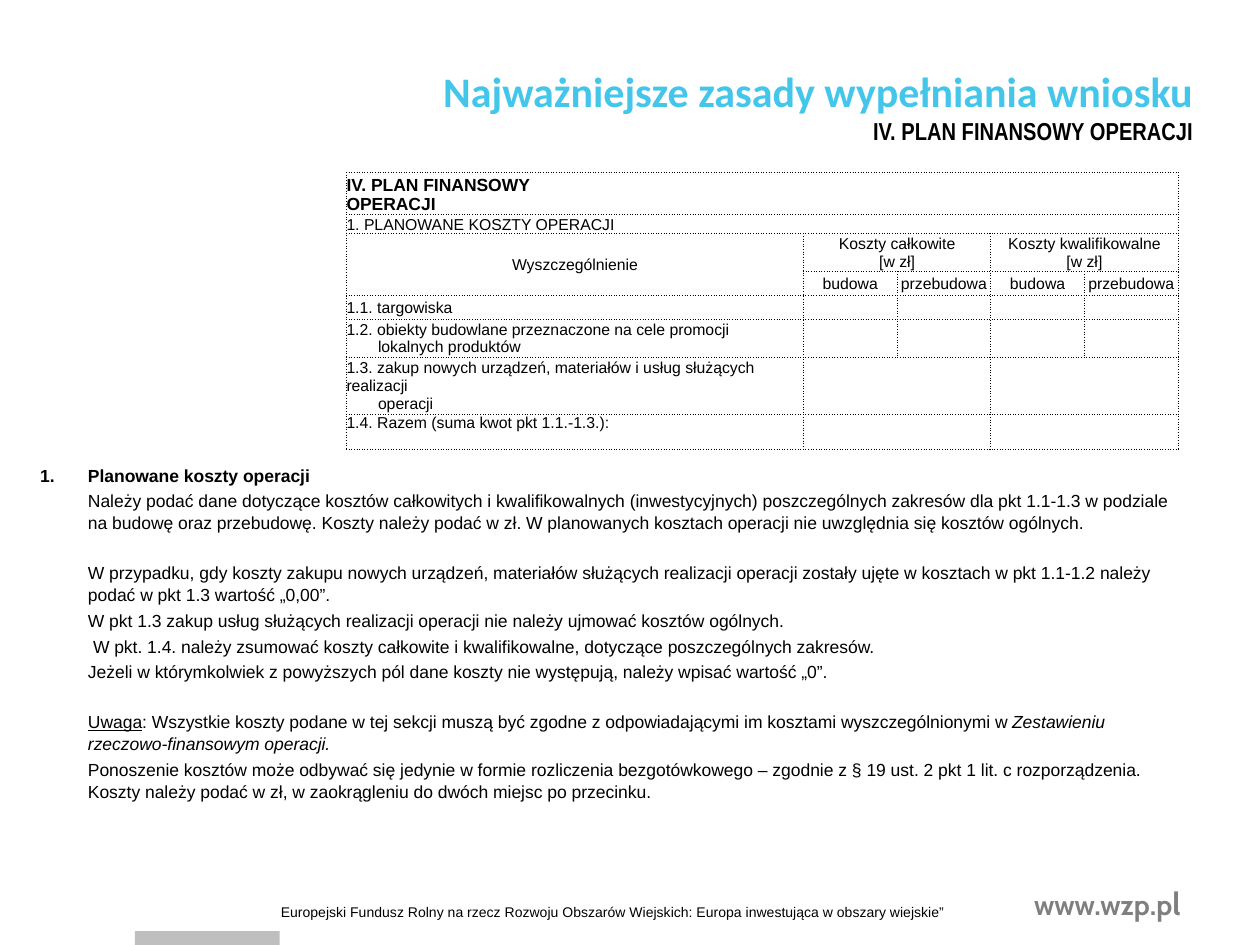
import pptx
import pptx.util
import pptx.dml.color
import pptx.enum.shapes
import pptx.enum.text
import pptx.oxml.ns
from lxml import etree

Inches = pptx.util.Inches
Pt = pptx.util.Pt
ALIGN = pptx.enum.text.PP_ALIGN
ANCHOR = pptx.enum.text.MSO_ANCHOR
LEFT, MID, RIGHT = ALIGN.LEFT, ALIGN.CENTER, ALIGN.RIGHT


def color(code):
    return pptx.dml.color.RGBColor.from_string(code)


def node(parent, tag, **attrs):
    return etree.SubElement(parent, pptx.oxml.ns.qn(tag), **attrs)


def write(par, text, size=10, font="Arial", ink="000000",
          bold=False, italic=False, under=False):
    run = par.add_run()
    run.text = text
    run.font.size = Pt(size)
    run.font.name = font
    run.font.bold = bold
    run.font.italic = italic
    run.font.underline = under
    run.font.color.rgb = color(ink)


def border(cell, sides):
    props = cell._tc.get_or_add_tcPr()
    for side in "LRTB":
        line = node(props, f"a:ln{side}", w="6350")
        if side in sides:
            fill = node(line, "a:solidFill")
            node(fill, "a:srgbClr", val="000000")
            node(line, "a:prstDash", val="dot")
        else:
            node(line, "a:noFill")


class Page:
    def __init__(self, deck):
        self.slide = deck.slides.add_slide(deck.slide_layouts[5])
        self.shapes = self.slide.shapes

    def title(self, box, lines):
        shape = self.shapes.title
        shape.left, shape.top, shape.width, shape.height = map(Inches, box)
        frame = shape.text_frame
        frame.auto_size = pptx.enum.text.MSO_AUTO_SIZE.NONE
        frame.vertical_anchor = ANCHOR.TOP
        self.fill(frame, [dict(runs=[line], align=RIGHT) for line in lines])

    def bar(self, box, fill):
        shape = self.shapes.add_shape(
            pptx.enum.shapes.MSO_SHAPE.RECTANGLE, *map(Inches, box))
        shape.shadow.inherit = False
        shape.fill.solid()
        shape.fill.fore_color.rgb = color(fill)
        shape.line.fill.background()

    def text(self, box, pars):
        frame = self.shapes.add_textbox(*map(Inches, box)).text_frame
        frame.word_wrap = True
        self.fill(frame, pars)

    def fill(self, frame, pars):
        for i, item in enumerate(pars):
            par = frame.add_paragraph() if i else frame.paragraphs[0]
            par.alignment = item.get("align", LEFT)
            par.space_before = Pt(item.get("gap", 0) if i else 0)
            par.line_spacing = item.get("lead", 1.0)
            props = par._p.get_or_add_pPr()
            props.set("marL", str(Inches(item.get("left", 0))))
            props.set("indent", str(Inches(item.get("first", 0))))
            if item.get("number"):
                node(props, "a:buFont", typeface="+mj-lt")
                node(props, "a:buAutoNum", type="arabicPeriod")
            for text, style in item["runs"]:
                write(par, text, **style)

    def table(self, box, widths, heights, cells):
        grid = self.shapes.add_table(
            len(heights), len(widths), *map(Inches, box)).table
        grid.first_row = grid.horz_banding = False
        for col, width in zip(grid.columns, widths):
            col.width = Inches(width)
        for row, height in zip(grid.rows, heights):
            row.height = Inches(height)
        # Plain dotted grid; the heading row has no inner lines
        last = len(widths) - 1
        for r in range(len(heights)):
            for c in range(len(widths)):
                cell = grid.cell(r, c)
                ends = ("L" if c == 0 else "") + ("R" if c == last else "")
                border(cell, "TB" + ends if r == 0 else "LRTB")
                cell.fill.solid()
                cell.fill.fore_color.rgb = color("FFFFFF")
                cell.margin_left = cell.margin_right = 0
                cell.margin_top = cell.margin_bottom = 0
                if (r, c) not in cells:
                    node(cell.text_frame.paragraphs[0]._p,
                         "a:endParaRPr", sz="900")
        for (r, c), (rows, cols, text, look) in cells.items():
            cell = grid.cell(r, c)
            if rows * cols > 1:
                cell.merge(grid.cell(r + rows - 1, c + cols - 1))
            if not text:
                node(cell.text_frame.paragraphs[0]._p,
                     "a:endParaRPr", sz="900")
                continue
            cell.vertical_anchor = look.get("anchor", ANCHOR.MIDDLE)
            style = dict(size=look.get("size", 9), bold=look.get("bold", False))
            self.fill(cell.text_frame, [
                dict(runs=[(line, style)], align=look.get("align", LEFT),
                     left=look.get("hang", 0) if i else 0)
                for i, line in enumerate(text.split("\n"))])


def costs():
    """Cells of the cost table: place -> row span, column span, text, look."""
    mid = dict(align=MID)
    cells = {
        (0, 0): (1, 1, "IV. PLAN FINANSOWY OPERACJI",
                 dict(size=10, bold=True, anchor=ANCHOR.BOTTOM)),
        (1, 0): (1, 25, "1. PLANOWANE KOSZTY OPERACJI",
                 dict(anchor=ANCHOR.BOTTOM)),
        (2, 0): (2, 9, "Wyszczególnienie", mid),
    }
    for c, kind in ((9, "całkowite"), (17, "kwalifikowalne")):
        cells[2, c] = (1, 8, f"Koszty {kind}\n[w zł]", mid)
        cells[3, c] = (1, 4, "budowa", mid)
        cells[3, c + 4] = (1, 4, "przebudowa", mid)
    items = [
        ("1.1. targowiska", 4, {}),
        ("1.2. obiekty budowlane przeznaczone na cele promocji\n"
         "lokalnych produktów", 4, {}),
        ("1.3. zakup nowych urządzeń, materiałów i usług służących realizacji\n"
         "operacji", 8, {}),
        ("1.4. Razem (suma kwot pkt 1.1.-1.3.):", 8, dict(anchor=ANCHOR.TOP)),
    ]
    for r, (text, span, look) in enumerate(items, 4):
        cells[r, 0] = (1, 9, text, dict(hang=0.25, **look))
        for c in range(9, 25, span):
            cells[r, c] = (1, span, "", {})
    return cells


def note(*runs, gap=2, **look):
    runs = [(run, {}) if isinstance(run, str) else run for run in runs]
    return dict(runs=runs, gap=gap, left=0.38, lead=1.05, **look)


def main():
    deck = pptx.Presentation()
    deck.slide_width, deck.slide_height = Inches(10), Inches(7.5)
    page = Page(deck)

    # Footer
    page.bar((1.07, 7.39, 1.15, 0.11), "BFBFBF")
    web = dict(font="Cabin", ink="7F7F7F", bold=True)
    page.text((8.11, 6.97, 1.6, 0.4), [dict(runs=[
        ("www.wzp.p", dict(size=16, **web)), ("l", dict(size=18, **web))])])
    page.text((2.13, 7.12, 7.08, 0.24), [dict(runs=[(
        "Europejski Fundusz Rolny na rzecz Rozwoju Obszarów Wiejskich: "
        "Europa inwestująca w obszary wiejskie”", dict(size=8))])])

    # Title
    page.title((3.15, 0.47, 6.42, 0.74), [
        ("Najważniejsze zasady wypełniania wniosku",
         dict(size=24, font="Calibri", ink="44C6EB", bold=True)),
        ("IV. PLAN FINANSOWY OPERACJI",
         dict(size=14, font="Arial Narrow", bold=True))])

    # Notes
    page.text((0.22, 3.63, 9.2, 2.75), [
        note(("Planowane koszty operacji", dict(bold=True)),
             first=-0.38, number=True),
        note("Należy podać dane dotyczące kosztów całkowitych i kwalifikowalnych "
             "(inwestycyjnych) poszczególnych zakresów dla pkt 1.1-1.3 w podziale "
             "na budowę oraz przebudowę. Koszty należy podać w zł. W planowanych "
             "kosztach operacji nie uwzględnia się kosztów ogólnych."),
        note("W przypadku, gdy koszty zakupu nowych urządzeń, materiałów służących "
             "realizacji operacji zostały ujęte w kosztach w pkt 1.1-1.2 należy "
             "podać w pkt 1.3 wartość „0,00”.", gap=16),
        note("W pkt 1.3 zakup usług służących realizacji operacji nie należy "
             "ujmować kosztów ogólnych."),
        note("W pkt. 1.4. należy zsumować koszty całkowite i kwalifikowalne, "
             "dotyczące poszczególnych zakresów.", first=0.04),
        note("Jeżeli w którymkolwiek z powyższych pól dane koszty nie występują, "
             "należy wpisać wartość „0”."),
        note(("Uwaga", dict(under=True)),
             ": Wszystkie koszty podane w tej sekcji muszą być zgodne z "
             "odpowiadającymi im kosztami wyszczególnionymi w ",
             ("Zestawieniu rzeczowo-finansowym operacji.", dict(italic=True)),
             gap=16),
        note("Ponoszenie kosztów może odbywać się jedynie w formie rozliczenia "
             "bezgotówkowego – zgodnie z § 19 ust. 2 pkt 1 lit. c rozporządzenia. "
             "Koszty należy podać w zł, w zaokrągleniu do dwóch miejsc po "
             "przecinku."),
    ])

    # Cost table
    page.table((2.75, 1.37, 6.6, 2.1), [2.14] + [4.46 / 24] * 24,
               [0.31, 0.14, 0.28, 0.19, 0.19, 0.29, 0.42, 0.28], costs())
    deck.save("out.pptx")


if __name__ == "__main__":
    main()
